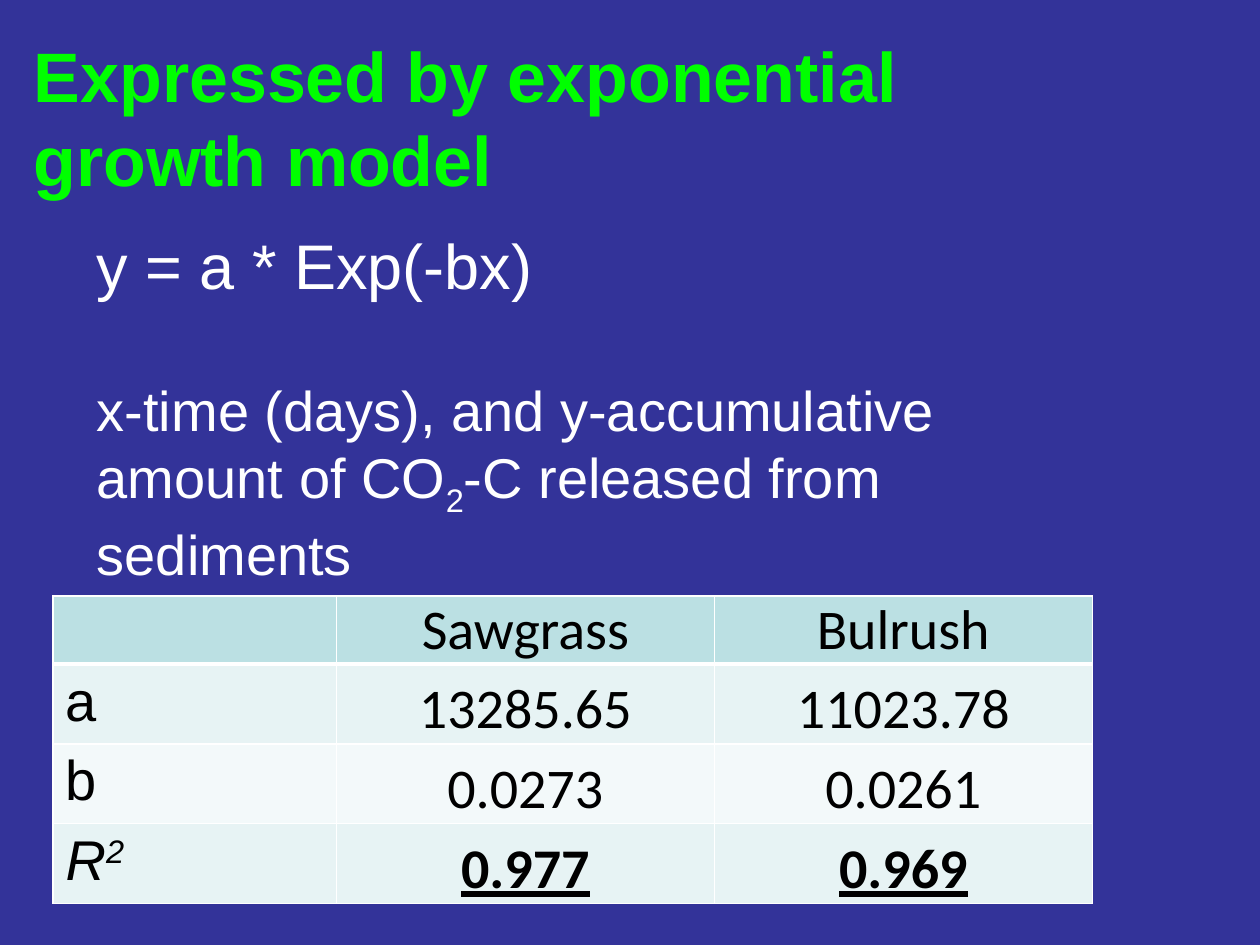
from pptx import Presentation
from pptx.dml.color import RGBColor
from pptx.enum.text import MSO_ANCHOR, PP_ALIGN
from pptx.oxml import parse_xml
from pptx.oxml.ns import nsdecls
from pptx.util import Inches, Pt

CENTER = PP_ALIGN.CENTER
MIDDLE, BOTTOM = MSO_ANCHOR.MIDDLE, MSO_ANCHOR.BOTTOM
COLORS = {
    "background": "333399", "title": "00FF00", "white": "FFFFFF", "black": "000000",
    "header": "BBE0E3", "band": "E7F3F4", "plain": "F3F9FA",
}


def add_text(p, text, size=32, color="white", font="Arial", bold=False,
             italic=False, underline=False, baseline=0):
    r = p.add_run()
    r.text = text
    f = r.font
    f.size, f.name = Pt(size), font
    f.bold, f.italic, f.underline = bold, italic, underline
    f.color.rgb = RGBColor.from_string(COLORS[color])
    if baseline:
        r._r.get_or_add_rPr().set("baseline", str(baseline * 1000))


def add_border(cell, side, width):
    cell._tc.get_or_add_tcPr().append(parse_xml(
        f'<a:{side} {nsdecls("a")} w="{Pt(width)}"><a:solidFill>'
        f'<a:srgbClr val="{COLORS["white"]}"/></a:solidFill></a:{side}>'))


prs = Presentation()
prs.slide_width, prs.slide_height = Inches(10), Inches(7.5)
slide = prs.slides.add_slide(prs.slide_layouts[6])
bg = slide.background.fill
bg.solid()
bg.fore_color.rgb = RGBColor.from_string(COLORS["background"])

title = slide.shapes.add_textbox(Inches(0.17), Inches(0.3), Inches(9), Inches(1.25))
tf = title.text_frame
tf.word_wrap = True
tf.vertical_anchor = MIDDLE
p = tf.paragraphs[0]
add_text(p, "Expressed by exponential", size=40, color="title", bold=True)
p.add_line_break()
add_text(p, "growth model", size=40, color="title", bold=True)

body = slide.shapes.add_textbox(Inches(0.67), Inches(1.75), Inches(7.5), Inches(2.93))
tf = body.text_frame
tf.word_wrap = True
add_text(tf.paragraphs[0], "y = a * Exp(-bx)", size=36)
p = tf.add_paragraph()
p.space_before = Pt(42)
add_text(p, "x-time (days), and y-accumulative amount of CO")
add_text(p, "2", baseline=-25)
add_text(p, "-C released from sediments")

rows = [
    ("", "Sawgrass", "Bulrush"),
    ("a", "13285.65", "11023.78"),
    ("b", "0.0273", "0.0261"),
    ("R", "0.977", "0.969"),
]
fills = ["header", "band", "plain", "band"]
table = slide.shapes.add_table(4, 3, Inches(0.42), Inches(4.73),
                               Inches(8.25), Inches(2.34)).table
for col, width in zip(table.columns, (2.25, 3, 3)):
    col.width = Inches(width)
for row, height in zip(table.rows, (0.54, 0.6, 0.6, 0.6)):
    row.height = Inches(height)

for i, values in enumerate(rows):
    last = i == len(rows) - 1
    for j, value in enumerate(values):
        cell = table.cell(i, j)
        for side in ("lnL", "lnR", "lnT", "lnB"):
            thick = (i == 0 and side == "lnB") or (i == 1 and side == "lnT")
            add_border(cell, side, 3 if thick else 1)
        cell.fill.solid()
        cell.fill.fore_color.rgb = RGBColor.from_string(COLORS[fills[i]])
        p = cell.text_frame.paragraphs[0]
        if j:
            cell.margin_left = cell.margin_right = 0
            cell.margin_top = cell.margin_bottom = 0
            cell.vertical_anchor = BOTTOM
            p.alignment = CENTER
            add_text(p, value, color="black", font="Calibri", bold=last, underline=last)
        elif value:
            add_text(p, value, color="black", italic=last)
            if last:
                add_text(p, "2", color="black", italic=True, baseline=30)

prs.save("out.pptx")
